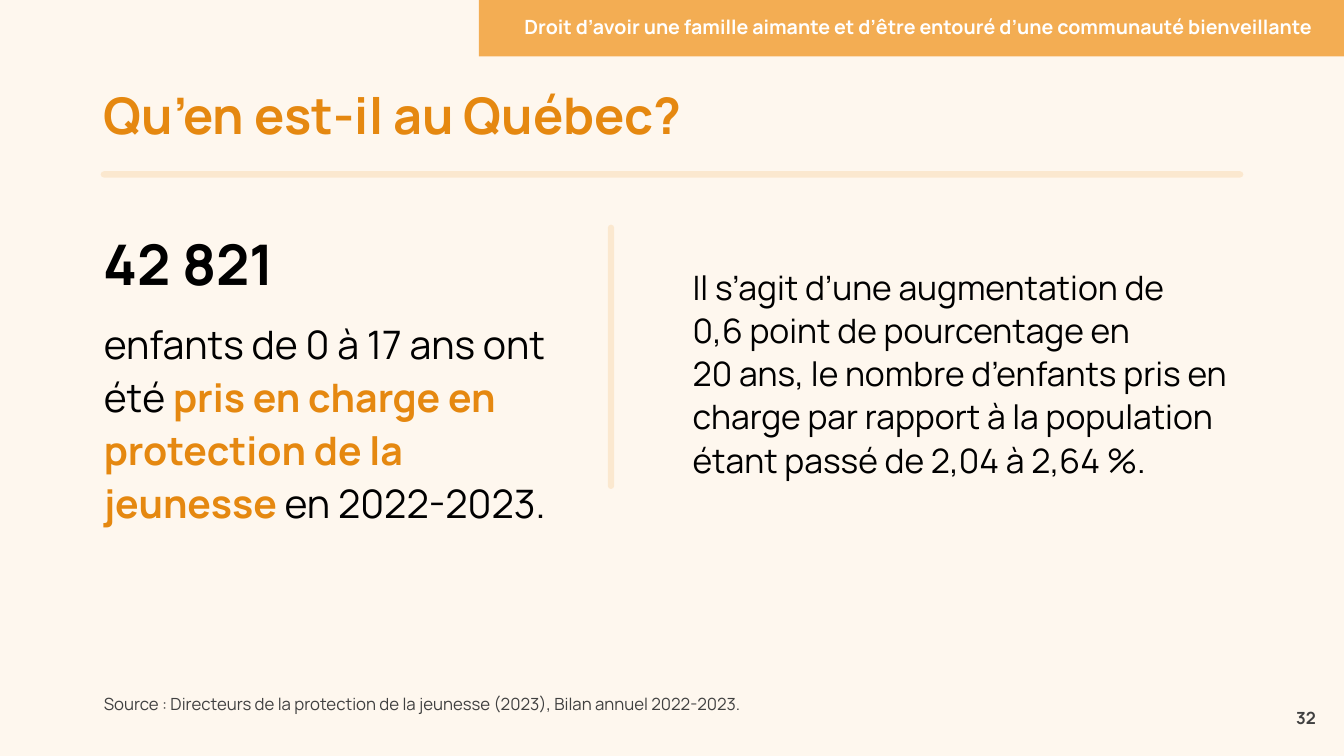
"""Build the slide on children in youth protection in Québec."""
from dataclasses import dataclass

from lxml import etree
from pptx import Presentation
from pptx.dml.color import RGBColor
from pptx.enum.shapes import MSO_CONNECTOR, MSO_SHAPE
from pptx.enum.text import MSO_ANCHOR, MSO_AUTO_SIZE, PP_ALIGN
from pptx.oxml.ns import qn
from pptx.util import Inches, Pt

LEFT, RIGHT = PP_ALIGN.LEFT, PP_ALIGN.RIGHT
TOP, MIDDLE, BOTTOM = MSO_ANCHOR.TOP, MSO_ANCHOR.MIDDLE, MSO_ANCHOR.BOTTOM
NO_AUTOFIT = MSO_AUTO_SIZE.NONE
STRAIGHT, RECTANGLE = MSO_CONNECTOR.STRAIGHT, MSO_SHAPE.RECTANGLE


@dataclass(frozen=True)
class Theme:
    """Font, colours and type sizes of the slide."""
    font: str = "Manrope"
    background: str = "FEF7EE"
    accent: str = "E58810"
    band: str = "F3AD53"
    ink: str = "000000"
    muted: str = "404040"
    light: str = "FFFFFF"
    title: int = 36
    figure: int = 40
    statement: int = 28
    detail: int = 24
    header: int = 14
    small: int = 12
    rule_width: float = 4.5
    rule_opacity: int = 20


THEME = Theme()

HEADER = "Droit d’avoir une famille aimante et d’être entouré d’une communauté bienveillante"
TITLE = "Qu’en est-il au Québec?"
FIGURE = "42 821"
STATEMENT = [
    ("enfants de 0 à 17 ans ont été ", False),
    ("pris en charge en protection de la jeunesse ", True),
    ("en 2022-2023.", False),
]
DETAIL = (
    "Il s’agit d’une augmentation de \n"
    "0,6 point de pourcentage en \n"
    "20 ans, le nombre d’enfants pris en charge par rapport à la population "
    "étant passé de 2,04 à 2,64 %."
)
SOURCE = "Source : Directeurs de la protection de la jeunesse (2023), Bilan annuel 2022-2023."
PAGE = "32"

SLIDE_W, SLIDE_H = 13.33, 7.5
MARGIN, CONTENT_RIGHT = 1.03, 12.3
RULE_Y, DIVIDER_X = 1.73, 6.06
DIVIDER_TOP, DIVIDER_BOTTOM = 2.26, 4.82
HEADER_LEFT, HEADER_H = 4.75, 0.56
DETAIL_LEFT = 6.87


def rgb(colour):
    """Turn a hex string into a colour."""
    return RGBColor.from_string(colour)


def write(shape, paragraphs, *, size, colour=THEME.ink, bold=False, align=LEFT,
          anchor=TOP, spacing=None, after=0, insets=(0, 0, 0, 0)):
    """Fill a shape with paragraphs given as lists of (text, format) runs."""
    frame = shape.text_frame
    frame.word_wrap = True
    frame.auto_size = NO_AUTOFIT
    frame.vertical_anchor = anchor
    (frame.margin_left, frame.margin_top,
     frame.margin_right, frame.margin_bottom) = map(Inches, insets)
    for index, runs in enumerate(paragraphs):
        paragraph = frame.add_paragraph() if index else frame.paragraphs[0]
        paragraph.alignment = align
        paragraph.line_spacing = spacing
        paragraph.space_after = Pt(after)
        for text, own in runs:
            for row, line in enumerate(text.split("\n")):
                if row:
                    paragraph.add_line_break()
                run = paragraph.add_run()
                run.text = line
                run.font.name = THEME.font
                run.font.size = Pt(own.get("size", size))
                run.font.bold = own.get("bold", bold)
                run.font.color.rgb = rgb(own.get("colour", colour))


def plain(text):
    """Wrap a text as one paragraph of one run."""
    return [[(text, {})]]


def add_text(slide, box, paragraphs, **text_format):
    """Add a text box at a place given in inches."""
    write(slide.shapes.add_textbox(*map(Inches, box)), paragraphs, **text_format)


def add_rule(slide, *ends):
    """Add a translucent line with round ends."""
    rule = slide.shapes.add_connector(STRAIGHT, *map(Inches, ends))
    rule.line.width = Pt(THEME.rule_width)
    rule.line.color.rgb = rgb(THEME.band)
    properties = rule._element.spPr
    properties.find(qn("a:ln")).set("cap", "rnd")
    colour = next(properties.iter(qn("a:srgbClr")))
    etree.SubElement(colour, qn("a:alpha")).set("val", str(THEME.rule_opacity * 1000))
    etree.SubElement(properties, qn("a:effectLst"))


def add_header(slide):
    """Add the coloured band at the top right."""
    band = slide.shapes.add_shape(
        RECTANGLE, Inches(HEADER_LEFT), 0, Inches(SLIDE_W - HEADER_LEFT), Inches(HEADER_H))
    band.shadow.inherit = False
    band.fill.solid()
    band.fill.fore_color.rgb = rgb(THEME.band)
    band.line.fill.background()
    write(band, plain(HEADER), size=THEME.header, colour=THEME.light, bold=True,
          align=RIGHT, anchor=MIDDLE, spacing=0.9, insets=(0, 0.05, 0.31, 0.05))


def main():
    """Compose and save the slide."""
    deck = Presentation()
    deck.slide_width, deck.slide_height = Inches(SLIDE_W), Inches(SLIDE_H)
    slide = deck.slides.add_slide(deck.slide_layouts[5])
    slide.background.fill.solid()
    slide.background.fill.fore_color.rgb = rgb(THEME.background)

    title = slide.shapes.title
    title.left, title.top, title.width, title.height = map(Inches, (MARGIN, 0.73, 10.72, 0.89))
    write(title, plain(TITLE), size=THEME.title, colour=THEME.accent, bold=True,
          anchor=MIDDLE, spacing=0.9)
    add_rule(slide, MARGIN, RULE_Y, CONTENT_RIGHT, RULE_Y)

    emphasis = {"bold": True, "colour": THEME.accent}
    figure = [(FIGURE, {"size": THEME.figure, "bold": True})]
    statement = [(text, emphasis if strong else {}) for text, strong in STATEMENT]
    add_text(slide, (MARGIN, 2.42, 4.76, 2.2), [figure, statement],
             size=THEME.statement, spacing=Pt(38), after=12)
    add_rule(slide, DIVIDER_X, DIVIDER_TOP, DIVIDER_X, DIVIDER_BOTTOM)
    add_text(slide, (DETAIL_LEFT, 2.62, CONTENT_RIGHT - DETAIL_LEFT, 2.2), plain(DETAIL),
             size=THEME.detail, spacing=1.07, after=12)

    add_text(slide, (MARGIN, 6.47, 8.23, 0.61), plain(SOURCE), size=THEME.small,
             colour=THEME.muted, anchor=BOTTOM, spacing=1.1)
    add_text(slide, (4.16, 7.02, 8.89, 0.21), plain(PAGE), size=THEME.small,
             colour=THEME.muted, bold=True, align=RIGHT, anchor=MIDDLE)
    add_header(slide)
    deck.save("out.pptx")


if __name__ == "__main__":
    main()
